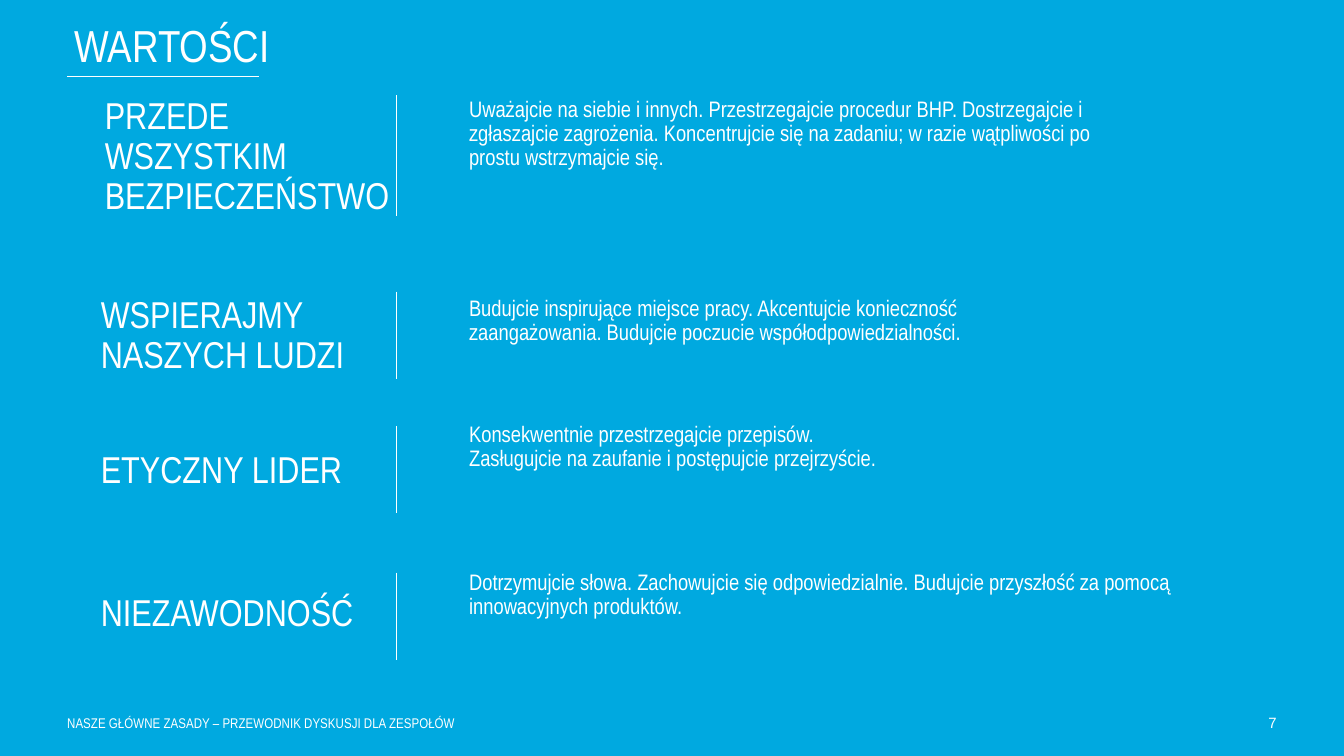
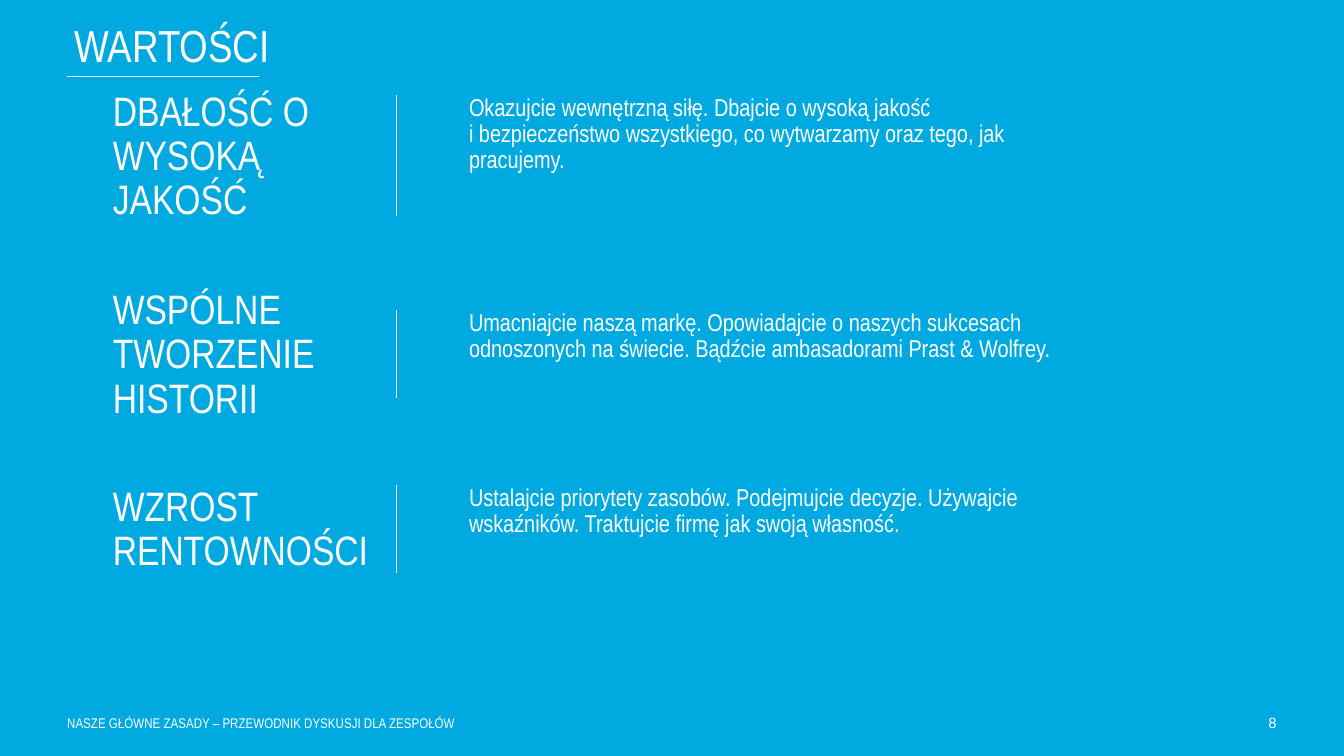
from pptx import Presentation
from pptx.dml.color import RGBColor
from pptx.enum.shapes import MSO_CONNECTOR
from pptx.enum.text import MSO_ANCHOR, PP_ALIGN
from pptx.oxml import parse_xml
from pptx.oxml.ns import nsdecls
from pptx.util import Inches, Pt

BLUE, WHITE = "00A9E0", "FFFFFF"
NARROW = "Arial Narrow"
FOOTER = "NASZE GŁÓWNE ZASADY – PRZEWODNIK DYSKUSJI DLA ZESPOŁÓW"
RULE, BODY = 29.5, 34.9


def color(code):
    return RGBColor.from_string(code)


def grid(count):
    return Inches(count / 10)


class Deck:
    def __init__(self):
        self.file = Presentation()
        self.file.slide_width = grid(100)
        self.file.slide_height = grid(56.25)
        self.slide = None

    def page(self, number):
        self.slide = self.file.slides.add_slide(self.file.slide_layouts[6])
        fill = self.slide.background.fill
        fill.solid()
        fill.fore_color.rgb = color(BLUE)
        self.text(FOOTER, (5, 53, 43.5, 2), 7.5, top=0.2, wrap=False, space=1)
        self.text(str(number), (90, 53, 5, 2), 8, font="Arial", top=0.1,
                  align=PP_ALIGN.RIGHT, wrap=False, space=1)
        self.text("WARTOŚCI", (0, 0, 25.6, 7.1), 24, middle=True,
                  align=PP_ALIGN.CENTER)
        self.line(5, 5.7, 19.3, 5.7)

    def text(self, words, area, size, font=NARROW, middle=False,
             align=PP_ALIGN.LEFT, wrap=True, space=0.9, top=0):
        frame = self.slide.shapes.add_textbox(*map(grid, area)).text_frame
        frame.margin_left = frame.margin_right = frame.margin_bottom = 0
        frame.margin_top = grid(top)
        frame.word_wrap = wrap
        frame.vertical_anchor = MSO_ANCHOR.MIDDLE if middle else MSO_ANCHOR.TOP
        para = frame.paragraphs[0]
        para.alignment = align
        para.line_spacing = space
        for index, part in enumerate(words.split("\n")):
            if index:
                para.add_line_break()
            run = para.add_run()
            run.text = part
            run.font.size = Pt(size)
            run.font.name = font
            run.font.color.rgb = color(WHITE)

    def line(self, *ends):
        rule = self.slide.shapes.add_connector(
            MSO_CONNECTOR.STRAIGHT, *map(grid, ends))
        rule.line.color.rgb = color(WHITE)
        rule.line.width = Pt(1)
        rule._element.spPr.append(
            parse_xml(f"<a:effectLst {nsdecls('a')}/>"))

    def value(self, name, area, size, words, body, small, rule):
        self.text(name, area, size, middle=True)
        self.text(words, (BODY, *body), small)
        start, height = rule
        self.line(RULE, start, RULE, start + height)


def main():
    deck = Deck()
    pages = [
        (7, 20, 12, [
            ("PRZEDE\nWSZYSTKIM BEZPIECZEŃSTWO", (7.8, 7.1, 24.1, 9.2),
             "Uważajcie na siebie i innych. Przestrzegajcie procedur BHP. "
             "Dostrzegajcie i zgłaszajcie zagrożenia. Koncentrujcie się na "
             "zadaniu; w razie wątpliwości po prostu wstrzymajcie się.",
             (7.3, 46.7, 6.7), (7.1, 9)),
            ("WSPIERAJMY NASZYCH LUDZI", (7.5, 21.7, 19.1, 6.7),
             "Budujcie inspirujące miejsce pracy. Akcentujcie konieczność "
             "zaangażowania. Budujcie poczucie współodpowiedzialności.",
             (22.1, 46.4, 4.5), (21.7, 6.5)),
            ("ETYCZNY LIDER", (7.5, 31.7, 19.1, 6.7),
             "Konsekwentnie przestrzegajcie przepisów. \n"
             "Zasługujcie na zaufanie i postępujcie przejrzyście.",
             (31.5, 45.9, 4.5), (31.7, 6.5)),
            ("NIEZAWODNOŚĆ", (7.5, 42.4, 19.1, 6.7),
             "Dotrzymujcie słowa. Zachowujcie się odpowiedzialnie. "
             "Budujcie przyszłość za pomocą innowacyjnych produktów.",
             (42.5, 54.5, 5.5), (42.6, 6.5)),
        ]),
        (8, 22, 13, [
            ("DBAŁOŚĆ O WYSOKĄ JAKOŚĆ", (8.4, 7.1, 21, 9.2),
             "Okazujcie wewnętrzną siłę. Dbajcie o wysoką jakość\n"
             "i bezpieczeństwo wszystkiego, co wytwarzamy oraz tego, jak "
             "pracujemy.",
             (7.1, 46.7, 11.2), (7.1, 9)),
            ("WSPÓLNE TWORZENIE HISTORII", (8.4, 23.1, 21, 6.7),
             "Umacniajcie naszą markę. Opowiadajcie o naszych sukcesach "
             "odnoszonych na świecie. Bądźcie ambasadorami Prast & Wolfrey.",
             (23.1, 49.1, 7.9), (23.1, 6.5)),
            ("WZROST RENTOWNOŚCI", (8.4, 36.1, 21, 6.7),
             "Ustalajcie priorytety zasobów. Podejmujcie decyzje. Używajcie "
             "wskaźników. Traktujcie firmę jak swoją własność.",
             (36.1, 49.1, 6.7), (36.1, 6.5)),
        ]),
    ]
    for number, size, small, values in pages:
        deck.page(number)
        for name, area, words, (top, width, height), rule in values:
            deck.value(name, area, size, words, (top, width, height),
                       small, rule)
    deck.file.save("out.pptx")


if __name__ == "__main__":
    main()
